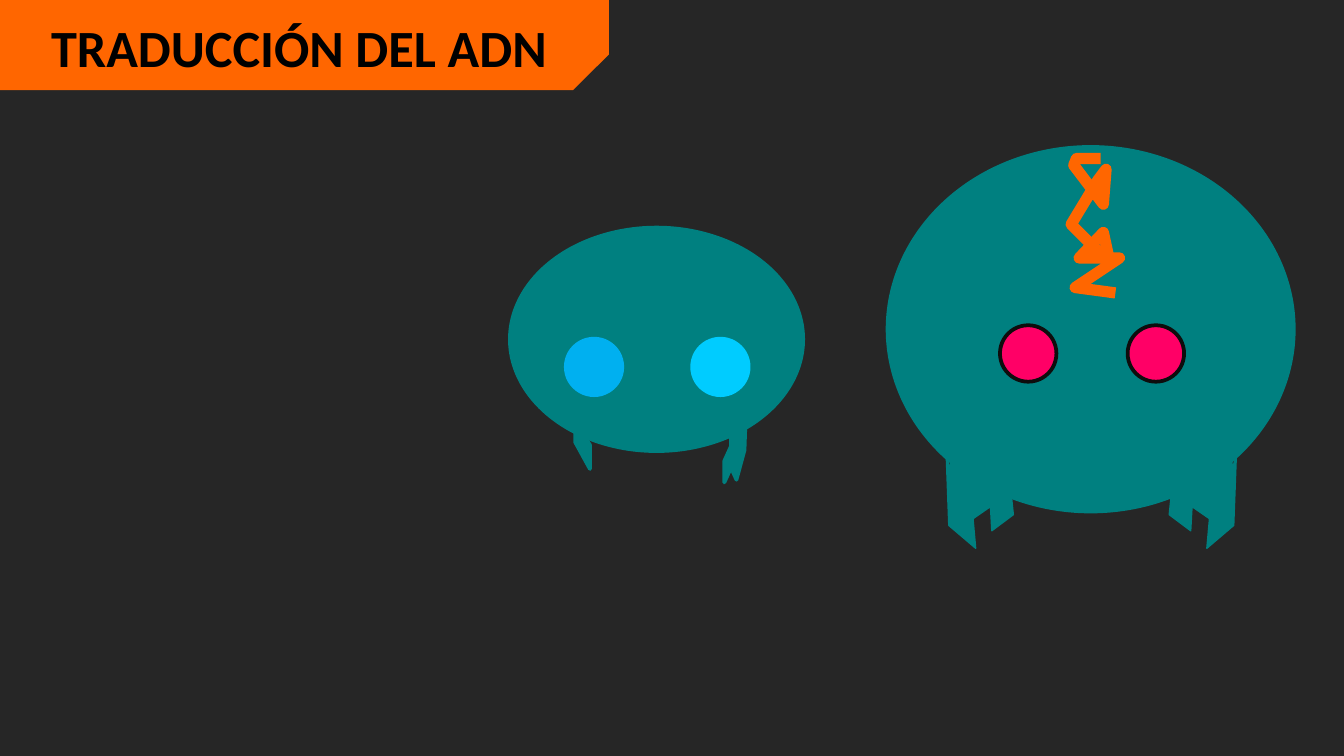
from pptx import Presentation
from pptx.dml.color import RGBColor
from pptx.enum.shapes import MSO_SHAPE
from pptx.enum.text import MSO_ANCHOR, MSO_AUTO_SIZE, PP_ALIGN
from pptx.util import Inches, Pt

OVAL = MSO_SHAPE.OVAL
SNIPPED = MSO_SHAPE.SNIP_1_RECTANGLE
MIDDLE = MSO_ANCHOR.MIDDLE
FIT_SHAPE = MSO_AUTO_SIZE.SHAPE_TO_FIT_TEXT
LEFT = PP_ALIGN.LEFT

SLIDE_WIDTH = 10
SLIDE_HEIGHT = SLIDE_WIDTH * 9 / 16
TITLE = "TRADUCCIÓN DEL ADN"
DARK, ORANGE, TEAL, BLACK = "262626", "FF6600", "008080", "000000"
EYE_SIZE = 0.42

LARGE_BODY = (6.59, 1.08, 3.05, 2.74)
LARGE_EYES = [(7.44, 2.42, "FF0066", "0D0D0D"), (8.39, 2.42, "FF0066", "0D0D0D")]
STRAND = [(8.3, 2.18), (8, 2.14), (8.33, 1.92), (8.03, 1.92), (8.21, 1.73),
          (8.26, 1.96), (7.97, 1.67), (8.17, 1.34), (8.23, 1.26), (8.21, 1.52),
          (7.99, 1.23), (8.01, 1.18), (8.19, 1.18)]
LEFT_FANGS = [(7.04, 3.37), (7.06, 3.91), (7.26, 4.08), (7.24, 3.86), (7.37, 3.77),
              (7.38, 3.95), (7.54, 3.83), (7.52, 3.64), (7.11, 3.28), (7.08, 3.39),
              (7.07, 3.47)]
MIRROR_X = 8.12
RIGHT_FANGS = [(2 * MIRROR_X - x, y) for x, y in LEFT_FANGS]

SMALL_BODY = (3.78, 1.68, 2.21, 1.69)
SMALL_EYES = [(4.21, 2.52, "00B0F0", "00B0F0"), (5.15, 2.52, "00CCFF", "00CCFF")]
SMALL_LEGS = [(4.28, 3.05), (4.28, 3.29), (4.39, 3.49), (4.39, 3.31), (4.35, 3.25),
              (4.36, 3.08), (5.44, 3.12), (5.44, 3.32), (5.39, 3.43), (5.39, 3.59),
              (5.44, 3.48), (5.48, 3.57), (5.54, 3.35), (5.55, 3.05)]


def color(value):
    return RGBColor.from_string(value)


def paint(shape, fill=None, line=None, width=0):
    shape.shadow.inherit = False
    if fill:
        shape.fill.solid()
        shape.fill.fore_color.rgb = color(fill)
    else:
        shape.fill.background()
    if line:
        shape.line.color.rgb = color(line)
        shape.line.width = Pt(width)
    else:
        shape.line.fill.background()


def add_preset(shapes, preset, box, fill, line=None, width=0):
    shape = shapes.add_shape(preset, *map(Inches, box))
    paint(shape, fill, line, width)
    return shape


def add_outline(shapes, points, fill, line, width, close=False):
    start, *others = [(Inches(x), Inches(y)) for x, y in points]
    builder = shapes.build_freeform(*start)
    builder.add_line_segments(others, close=close)
    paint(builder.convert_to_shape(), fill, line, width)


def add_head(shapes, body, eyes):
    add_preset(shapes, OVAL, body, TEAL)
    for x, y, fill, line in eyes:
        add_preset(shapes, OVAL, (x, y, EYE_SIZE, EYE_SIZE), fill, line, 2)


def add_title(slide):
    banner = add_preset(slide.shapes, SNIPPED, (0, 0, 4.53, 0.67), ORANGE)
    banner.adjustments[0] = 0.395
    banner.rotation = 180
    banner._element.spPr.xfrm.set("flipH", "1")

    title = slide.shapes.title
    banner._element.addnext(title._element)
    title.left, title.top, title.width, title.height = map(Inches, (0.28, 0.06, 3.93, 0.57))
    frame = title.text_frame
    frame.text = TITLE
    frame.word_wrap = False
    frame.auto_size = FIT_SHAPE
    frame.vertical_anchor = MIDDLE
    paragraph = frame.paragraphs[0]
    paragraph.alignment = LEFT
    font = paragraph.runs[0].font
    font.name, font.size, font.bold = "Calibri", Pt(28), True
    font.color.rgb = color(BLACK)


def main():
    deck = Presentation()
    deck.slide_width, deck.slide_height = Inches(SLIDE_WIDTH), Inches(SLIDE_HEIGHT)
    slide = deck.slides.add_slide(deck.slide_layouts[5])
    slide.background.fill.solid()
    slide.background.fill.fore_color.rgb = color(DARK)
    add_title(slide)

    large = slide.shapes.add_group_shape().shapes
    add_head(large, LARGE_BODY, LARGE_EYES)
    add_outline(large, STRAND, None, ORANGE, 6)
    for fangs in (LEFT_FANGS, RIGHT_FANGS):
        add_outline(large, fangs, TEAL, TEAL, 0.75)

    small = slide.shapes.add_group_shape().shapes
    add_head(small, SMALL_BODY, SMALL_EYES)
    add_outline(small, SMALL_LEGS, TEAL, TEAL, 2, close=True)

    deck.save("out.pptx")


if __name__ == "__main__":
    main()
